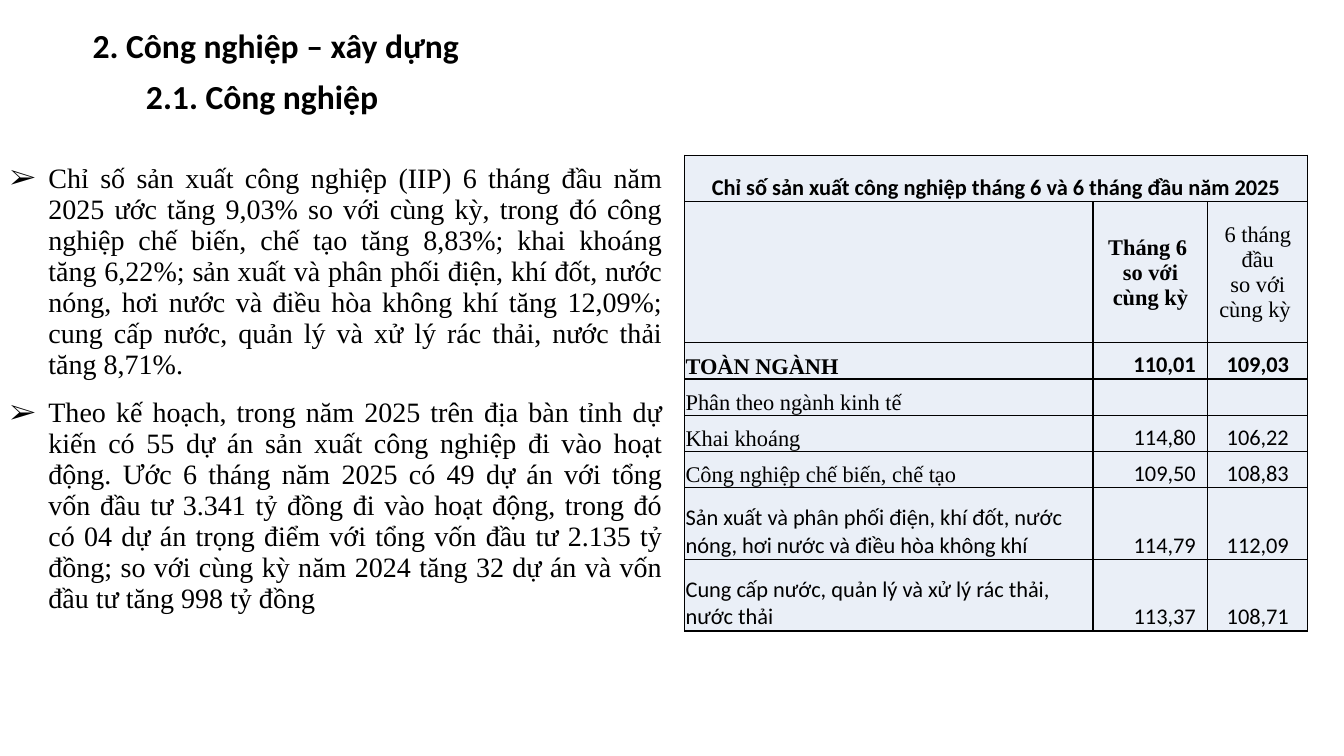
"""Build the industrial production slide with its commentary and index table."""
from dataclasses import dataclass

from lxml.etree import SubElement
from pptx import Presentation
from pptx.dml.color import RGBColor
from pptx.enum.text import MSO_ANCHOR as Anchor, PP_ALIGN as Align
from pptx.oxml.ns import qn
from pptx.util import Pt

EMU_PER_PX = 9144


@dataclass(frozen=True)
class Theme:
    ink: str = "000000"
    cell: str = "EAEFF7"
    sans: str = "Calibri"
    serif: str = "Times New Roman"
    heading: int = 24
    body: int = 20
    table: int = 16
    border: int = 1


@dataclass(frozen=True)
class Heading:
    text: str
    left: int
    top: int
    width: int
    height: int = 50


@dataclass(frozen=True)
class IndexRow:
    label: str
    month: str
    half_year: str
    height: int = 36
    label_font: str = "Times New Roman"
    bold: bool = False


THEME = Theme()
HEADINGS = (
    Heading("2. Công nghiệp – xây dựng", 82, 20, 483),
    Heading("2.1. Công nghiệp", 135, 70, 377),
)
COMMENTARY = (
    "Chỉ số sản xuất công nghiệp (IIP) 6 tháng đầu năm 2025 ước tăng 9,03% so với cùng kỳ, "
    "trong đó công nghiệp chế biến, chế tạo tăng 8,83%; khai khoáng tăng 6,22%; sản xuất và "
    "phân phối điện, khí đốt, nước nóng, hơi nước và điều hòa không khí tăng 12,09%; cung cấp "
    "nước, quản lý và xử lý rác thải, nước thải tăng 8,71%.",
    "Theo kế hoạch, trong năm 2025 trên địa bàn tỉnh dự kiến có 55 dự án sản xuất công nghiệp "
    "đi vào hoạt động. Ước 6 tháng năm 2025 có 49 dự án với tổng vốn đầu tư 3.341 tỷ đồng đi "
    "vào hoạt động, trong đó có 04 dự án trọng điểm với tổng vốn đầu tư 2.135 tỷ đồng; so với "
    "cùng kỳ năm 2024 tăng 32 dự án và vốn đầu tư tăng 998 tỷ đồng",
)
TABLE_TITLE = "Chỉ số sản xuất công nghiệp tháng 6 và 6 tháng đầu năm 2025"
MONTH_HEADER = "Tháng 6 \nso với\ncùng kỳ"
HALF_YEAR_HEADER = "6 tháng đầu\nso với\ncùng kỳ "
INDEX_ROWS = (
    IndexRow("TOÀN NGÀNH", "110,01", "109,03", bold=True),
    IndexRow("Phân theo ngành kinh tế", "", ""),
    IndexRow("Khai khoáng", "114,80", "106,22"),
    IndexRow("Công nghiệp chế biến, chế tạo", "109,50", "108,83"),
    IndexRow("Sản xuất và phân phối điện, khí đốt, nước nóng, hơi nước và điều hòa không khí",
             "114,79", "112,09", height=71, label_font=THEME.sans),
    IndexRow("Cung cấp nước, quản lý và xử lý rác thải, nước thải",
             "113,37", "108,71", height=71, label_font=THEME.sans),
)
COLUMN_WIDTHS = (405, 114, 99)
TITLE_HEIGHT, HEADER_HEIGHT = 46, 140


def px(length: int) -> int:
    """Turn px into EMU."""
    return length * EMU_PER_PX


def write(frame, text: str, *, size: int, font: str, bold: bool = False,
          align: Align = Align.LEFT, bullet: str = "", indent: int = 0,
          space_after: int = 0) -> None:
    """Fill a text frame, one paragraph for each line of text."""
    for number, line in enumerate(text.split("\n")):
        paragraph = frame.add_paragraph() if number else frame.paragraphs[0]
        paragraph.alignment = align
        paragraph.space_after = Pt(space_after)
        if bullet:
            properties = paragraph._p.get_or_add_pPr()
            properties.set("marL", str(px(indent)))
            properties.set("indent", str(-px(indent)))
            SubElement(properties, qn("a:buFont"), typeface=font)
            SubElement(properties, qn("a:buChar"), char=bullet)
        if line:
            run = paragraph.add_run()
            run.text = line
            run.font.size, run.font.name, run.font.bold = Pt(size), font, bold
            run.font.color.rgb = RGBColor.from_string(THEME.ink)


def add_heading(slide, heading: Heading) -> None:
    """Draw one heading."""
    shape = slide.shapes.add_textbox(px(heading.left), px(heading.top),
                                     px(heading.width), px(heading.height))
    shape.text_frame.word_wrap = True
    write(shape.text_frame, heading.text, size=THEME.heading, font=THEME.sans, bold=True)


def add_grid(slide, left: int, top: int, widths: tuple[int, ...], heights: tuple[int, ...]):
    """Add a table without banding and return it."""
    table = slide.shapes.add_table(len(heights), len(widths), px(left), px(top),
                                   px(sum(widths)), px(sum(heights))).table
    table.first_row = table.horz_banding = False
    for column, width in zip(table.columns, widths):
        column.width = px(width)
    for row, height in zip(table.rows, heights):
        row.height = px(height)
    return table


def style_cell(cell) -> None:
    """Give an index cell its borders, fill and insets."""
    properties = cell._tc.get_or_add_tcPr()
    for side in ("a:lnL", "a:lnR", "a:lnT", "a:lnB"):
        line = SubElement(properties, qn(side), w=str(Pt(THEME.border)))
        fill = SubElement(line, qn("a:solidFill"))
        SubElement(fill, qn("a:srgbClr"), val=THEME.ink)
    cell.fill.solid()
    cell.fill.fore_color.rgb = RGBColor.from_string(THEME.cell)
    cell.margin_left = cell.margin_right = cell.margin_top = px(1)
    cell.margin_bottom = 0
    cell.vertical_anchor = Anchor.BOTTOM


def add_commentary(slide) -> None:
    """Draw the bulleted commentary in a one-cell table."""
    cell = add_grid(slide, 0, 139, (667,), (493,)).cell(0, 0)
    cell.fill.background()
    cell.vertical_anchor = Anchor.MIDDLE
    write(cell.text_frame, "\n".join(COMMENTARY), size=THEME.body, font=THEME.serif,
          align=Align.JUSTIFY, bullet="➢", indent=38, space_after=12)


def add_index_table(slide) -> None:
    """Draw the production index table."""
    heights = (TITLE_HEIGHT, HEADER_HEIGHT, *(row.height for row in INDEX_ROWS))
    table = add_grid(slide, 679, 154, COLUMN_WIDTHS, heights)
    for cell in table.iter_cells():
        style_cell(cell)
    title = table.cell(0, 0)
    title.merge(table.cell(0, 2))
    write(title.text_frame, TABLE_TITLE, size=THEME.table, font=THEME.sans,
          bold=True, align=Align.CENTER)
    for column, (header, bold) in enumerate(((MONTH_HEADER, True), (HALF_YEAR_HEADER, False)), 1):
        cell = table.cell(1, column)
        cell.vertical_anchor = Anchor.MIDDLE
        write(cell.text_frame, header, size=THEME.table, font=THEME.serif,
              bold=bold, align=Align.CENTER)
    for number, row in enumerate(INDEX_ROWS, 2):
        entries = ((row.label, row.label_font, Align.LEFT),
                   (row.month, THEME.sans, Align.RIGHT),
                   (row.half_year, THEME.sans, Align.CENTER))
        for column, (text, font, align) in enumerate(entries):
            cell = table.cell(number, column)
            if align == Align.RIGHT:
                cell.margin_right = px(12)
            write(cell.text_frame, text, size=THEME.table, font=font, bold=row.bold, align=align)


def main() -> None:
    """Build and save the presentation."""
    presentation = Presentation()
    presentation.slide_width, presentation.slide_height = px(1333), px(750)
    slide = presentation.slides.add_slide(presentation.slide_layouts[6])
    for heading in HEADINGS:
        add_heading(slide, heading)
    add_commentary(slide)
    add_index_table(slide)
    presentation.save("out.pptx")


if __name__ == "__main__":
    main()
